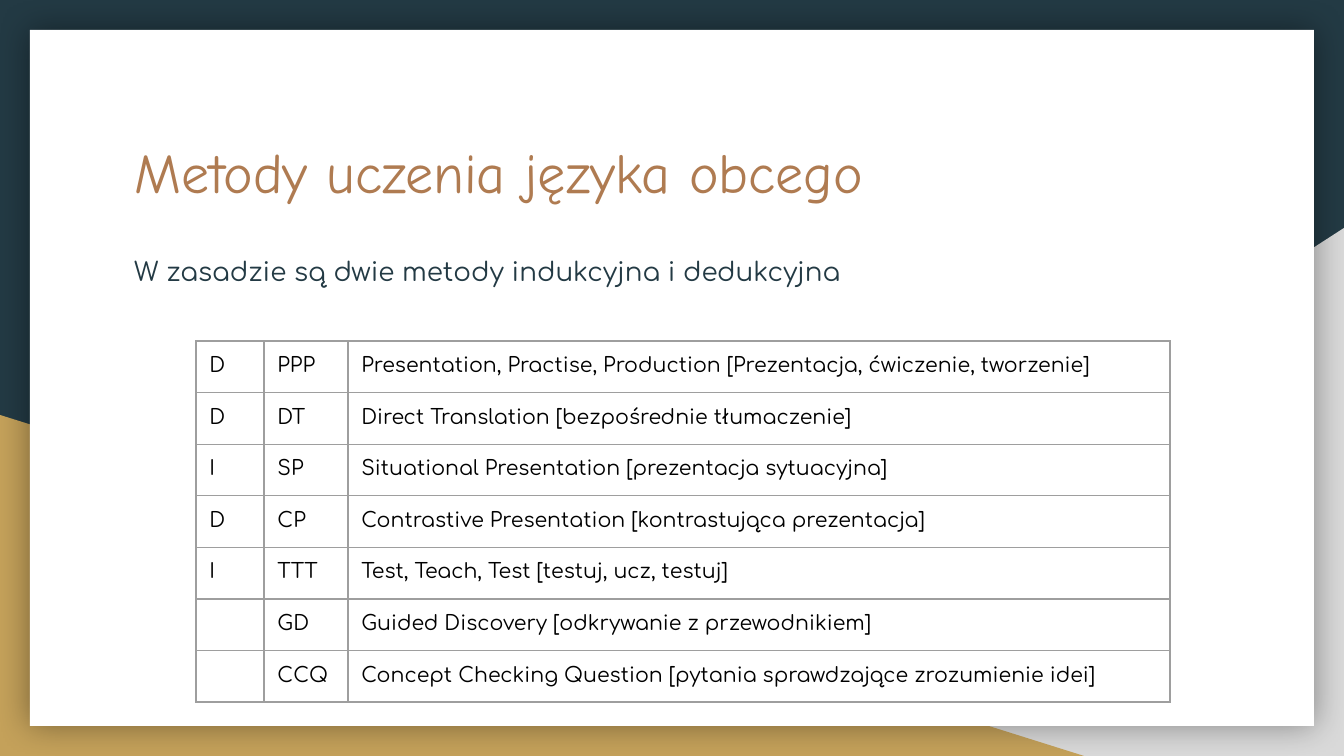
import pptx
import pptx.dml.color
import pptx.enum.shapes
import pptx.oxml
import pptx.oxml.ns
import pptx.util

TITLE = "Metody uczenia języka obcego"
INTRO = "W zasadzie są dwie metody indukcyjna i dedukcyjna"
METHODS = [
    ("D", "PPP", "Presentation, Practise, Production [Prezentacja, ćwiczenie, tworzenie]"),
    ("D", "DT", "Direct Translation [bezpośrednie tłumaczenie]"),
    ("I", "SP", "Situational Presentation [prezentacja sytuacyjna]"),
    ("D", "CP", "Contrastive Presentation [kontrastująca prezentacja]"),
    ("I", "TTT", "Test, Teach, Test [testuj, ucz, testuj]"),
    ("", "GD", "Guided Discovery [odkrywanie z przewodnikiem]"),
    ("", "CCQ", "Concept Checking Question [pytania sprawdzające zrozumienie idei]"),
]
COLUMN_WIDTHS = (68, 84, 822)
ROW_HEIGHT = 50
WIDTH, HEIGHT = 1344, 756
NAVY, GOLD, GREY, BROWN = "233A44", "C4A15A", "D9D9D9", "AF7B51"
INSET = pptx.util.Inches(0.1)
NS = pptx.oxml.ns.nsdecls("a")


def px(length):
    return pptx.util.Emu(round(length * 9144000 / WIDTH))


def rgb(color):
    return pptx.dml.color.RGBColor.from_string(color)


def set_font(paragraph, name, size, color):
    paragraph.font.name = name
    paragraph.font.size = pptx.util.Pt(size)
    paragraph.font.color.rgb = rgb(color)


def add_panel(slide, kind, box, color):
    panel = slide.shapes.add_shape(kind, *map(px, box))
    panel.fill.solid()
    panel.fill.fore_color.rgb = rgb(color)
    panel.line.fill.background()
    panel.shadow.inherit = False
    return panel


def add_text(slide, box, text, name, size, color):
    frame = slide.shapes.add_textbox(*map(px, box)).text_frame
    frame.word_wrap = True
    frame.margin_left = frame.margin_right = INSET
    frame.margin_top = frame.margin_bottom = INSET
    paragraph = frame.paragraphs[0]
    paragraph.text = text
    set_font(paragraph, name, size, color)
    return paragraph


def add_borders(cell):
    properties = cell._tc.get_or_add_tcPr()
    for position, side in enumerate(("lnL", "lnR", "lnT", "lnB")):
        properties.insert(position, pptx.oxml.parse_xml(
            f'<a:{side} {NS} w="9525"><a:solidFill><a:srgbClr val="9E9E9E"/>'
            f'</a:solidFill></a:{side}>'))


def fill_cell(cell, text):
    cell.margin_left = cell.margin_right = INSET
    cell.margin_top = cell.margin_bottom = INSET
    cell.fill.background()
    add_borders(cell)
    paragraph = cell.text_frame.paragraphs[0]
    paragraph.text = text
    set_font(paragraph, "Comfortaa", 11, "000000")
    # Keeps empty cells from stretching their row
    paragraph._p.get_or_add_endParaRPr().set("sz", "1100")


def main():
    deck = pptx.Presentation()
    deck.slide_width, deck.slide_height = px(WIDTH), px(HEIGHT)
    slide = deck.slides.add_slide(deck.slide_layouts[6])

    # Background triangles and white sheet
    slide.background.fill.solid()
    slide.background.fill.fore_color.rgb = rgb(NAVY)
    kinds = pptx.enum.shapes.MSO_SHAPE
    grey_corner = add_panel(slide, kinds.RIGHT_TRIANGLE, (527, 228, 817, 528), GREY)
    grey_corner._element.spPr.xfrm.set("flipH", "1")
    add_panel(slide, kinds.RIGHT_TRIANGLE, (0, 415, 1084, 341), GOLD)
    sheet = add_panel(slide, kinds.RECTANGLE, (30, 30, 1284, 696), "FFFFFF")
    glow = sheet._element.spPr.find(pptx.oxml.ns.qn("a:effectLst"))
    glow.append(pptx.oxml.parse_xml(
        f'<a:outerShdw {NS} blurRad="228600" dist="0" algn="ctr" rotWithShape="0">'
        '<a:srgbClr val="000000"><a:alpha val="40000"/></a:srgbClr></a:outerShdw>'))

    # Heading and introduction
    add_text(slide, (121, 124, 1103, 140), TITLE, "Comic Neue", 30, BROWN)
    intro = add_text(slide, (121, 237, 1103, 75), INTRO, "Comfortaa", 14, NAVY)
    intro.line_spacing = 1.15
    intro.space_after = pptx.util.Pt(16)

    # Table of methods
    box = (196, 341, sum(COLUMN_WIDTHS), ROW_HEIGHT * len(METHODS))
    methods = slide.shapes.add_table(
        len(METHODS), len(COLUMN_WIDTHS), *map(px, box)).table
    methods.first_row = methods.horz_banding = False
    for column, width in zip(methods.columns, COLUMN_WIDTHS):
        column.width = px(width)
    for row, texts in zip(methods.rows, METHODS):
        row.height = px(ROW_HEIGHT)
        for cell, text in zip(row.cells, texts):
            fill_cell(cell, text)

    deck.save("out.pptx")


if __name__ == "__main__":
    main()
